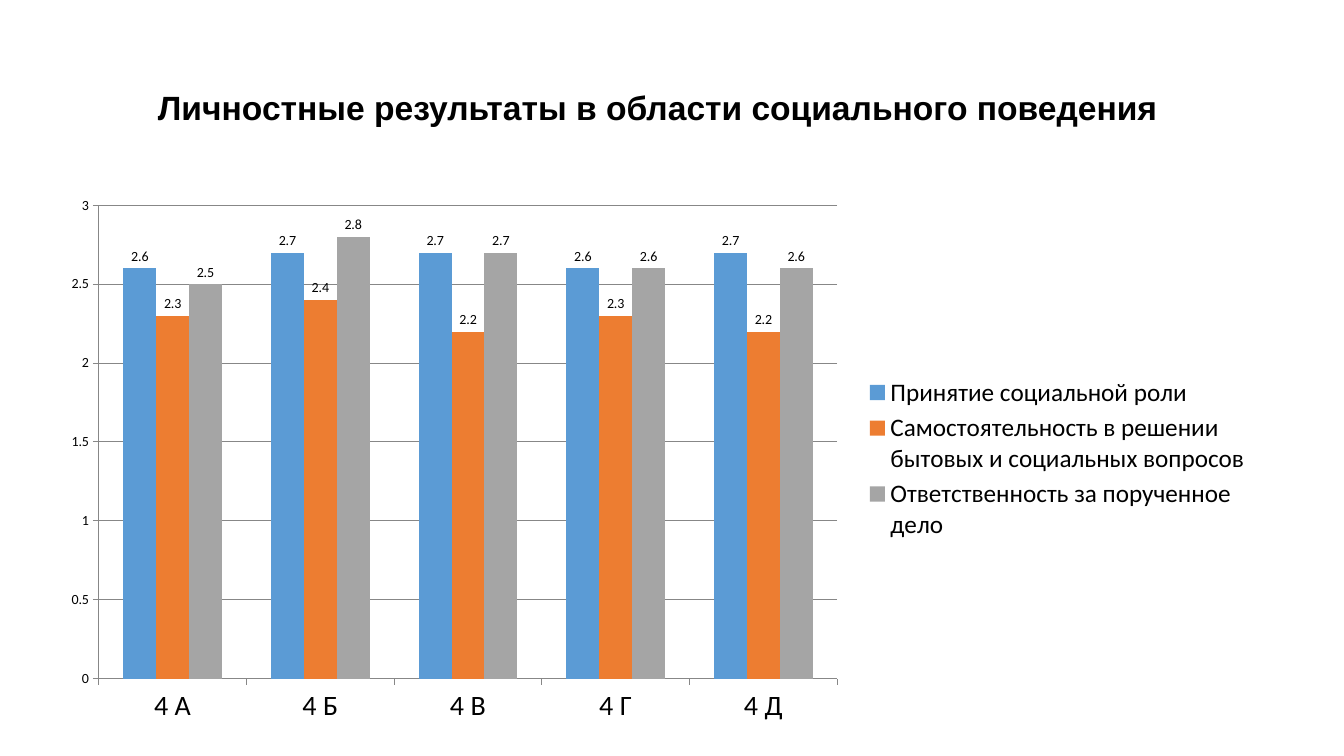
from dataclasses import dataclass

import lxml.etree
import pptx
import pptx.chart.chart
import pptx.chart.data
import pptx.dml.color
import pptx.enum.chart
import pptx.enum.text
import pptx.oxml.ns
import pptx.slide
import pptx.util

BLACK = "000000"
GRID_GREY = "878787"


@dataclass(frozen=True)
class Criterion:
    name: str
    scores: tuple[float, ...]
    color: str


CLASSES = ("4 А", "4 Б", "4 В", "4 Г", "4 Д")
CRITERIA = (
    Criterion("Принятие социальной роли", (2.6, 2.7, 2.7, 2.6, 2.7), "5B9BD5"),
    Criterion(
        "Самостоятельность в решении бытовых и социальных вопросов",
        (2.3, 2.4, 2.2, 2.3, 2.2),
        "ED7D31",
    ),
    Criterion("Ответственность за порученное дело", (2.5, 2.8, 2.7, 2.6, 2.6), "A5A5A5"),
)
PLOT_LAYOUT = {
    "layoutTarget": "inner",
    "xMode": "edge",
    "yMode": "edge",
    "x": "0.04",
    "y": "0.04",
    "w": "0.61",
    "h": "0.86",
}


def rgb(color: str) -> pptx.dml.color.RGBColor:
    return pptx.dml.color.RGBColor.from_string(color)


def style_font(font, size: float, name: str, bold: bool = False) -> None:
    font.size = pptx.util.Pt(size)
    font.name = name
    font.bold = bold
    font.color.rgb = rgb(BLACK)


def style_line(line) -> None:
    line.color.rgb = rgb(GRID_GREY)
    line.width = pptx.util.Pt(0.75)


def add_title(slide: pptx.slide.Slide, text: str) -> None:
    title = slide.shapes.add_textbox(
        pptx.util.Cm(3), pptx.util.Cm(2.06), pptx.util.Cm(27.15), pptx.util.Cm(1.27)
    )
    frame = title.text_frame
    frame.word_wrap = True
    frame.auto_size = pptx.enum.text.MSO_AUTO_SIZE.SHAPE_TO_FIT_TEXT
    frame.vertical_anchor = pptx.enum.text.MSO_ANCHOR.MIDDLE
    paragraph = frame.paragraphs[0]
    paragraph.alignment = pptx.enum.text.PP_ALIGN.CENTER
    run = paragraph.add_run()
    run.text = text
    style_font(run.font, 24, "Arial", bold=True)


def place_plot(chart: pptx.chart.chart.Chart) -> None:
    qn = pptx.oxml.ns.qn
    plot_area = chart.element.find(f".//{qn('c:plotArea')}")
    layout = plot_area.find(qn("c:layout"))
    if layout is None:
        layout = lxml.etree.Element(qn("c:layout"))
        plot_area.insert(0, layout)
    manual = lxml.etree.SubElement(layout, qn("c:manualLayout"))
    for tag, value in PLOT_LAYOUT.items():
        lxml.etree.SubElement(manual, qn(f"c:{tag}")).set("val", value)


def style_axes(chart: pptx.chart.chart.Chart) -> None:
    for axis, size in ((chart.category_axis, 20), (chart.value_axis, 10)):
        axis.major_tick_mark = pptx.enum.chart.XL_TICK_MARK.OUTSIDE
        axis.minor_tick_mark = pptx.enum.chart.XL_TICK_MARK.NONE
        style_font(axis.tick_labels.font, size, "Calibri")
        style_line(axis.format.line)
    scores = chart.value_axis
    scores.minimum_scale, scores.maximum_scale, scores.major_unit = 0, 3, 0.5
    scores.has_major_gridlines = True
    style_line(scores.major_gridlines.format.line)


def add_results(slide: pptx.slide.Slide) -> None:
    results = pptx.chart.data.CategoryChartData(number_format="General")
    results.categories = CLASSES
    for criterion in CRITERIA:
        results.add_series(criterion.name, criterion.scores)
    chart = slide.shapes.add_chart(
        pptx.enum.chart.XL_CHART_TYPE.COLUMN_CLUSTERED,
        pptx.util.Cm(1.27),
        pptx.util.Cm(4.62),
        pptx.util.Cm(30.51),
        pptx.util.Cm(13.87),
        results,
    ).chart
    chart.has_title = False
    style_font(chart.font, 10, "Calibri")
    chart.has_legend = True
    chart.legend.position = pptx.enum.chart.XL_LEGEND_POSITION.RIGHT
    chart.legend.include_in_layout = False
    style_font(chart.legend.font, 18, "Calibri")
    style_axes(chart)
    place_plot(chart)

    columns = chart.plots[0]
    columns.gap_width = 150
    columns.overlap = 0
    columns.vary_by_categories = False
    for series, criterion in zip(columns.series, CRITERIA):
        series.format.fill.solid()
        series.format.fill.fore_color.rgb = rgb(criterion.color)
        labels = series.data_labels
        labels.show_value = True
        labels.position = pptx.enum.chart.XL_LABEL_POSITION.OUTSIDE_END
        style_font(labels.font, 10, "Calibri")


def main() -> None:
    presentation = pptx.Presentation()
    presentation.slide_width = pptx.util.Cm(33.87)
    presentation.slide_height = pptx.util.Cm(19.05)
    slide = presentation.slides.add_slide(presentation.slide_layouts[6])
    add_title(slide, "Личностные результаты в области социального поведения")
    add_results(slide)
    presentation.save("out.pptx")


if __name__ == "__main__":
    main()
